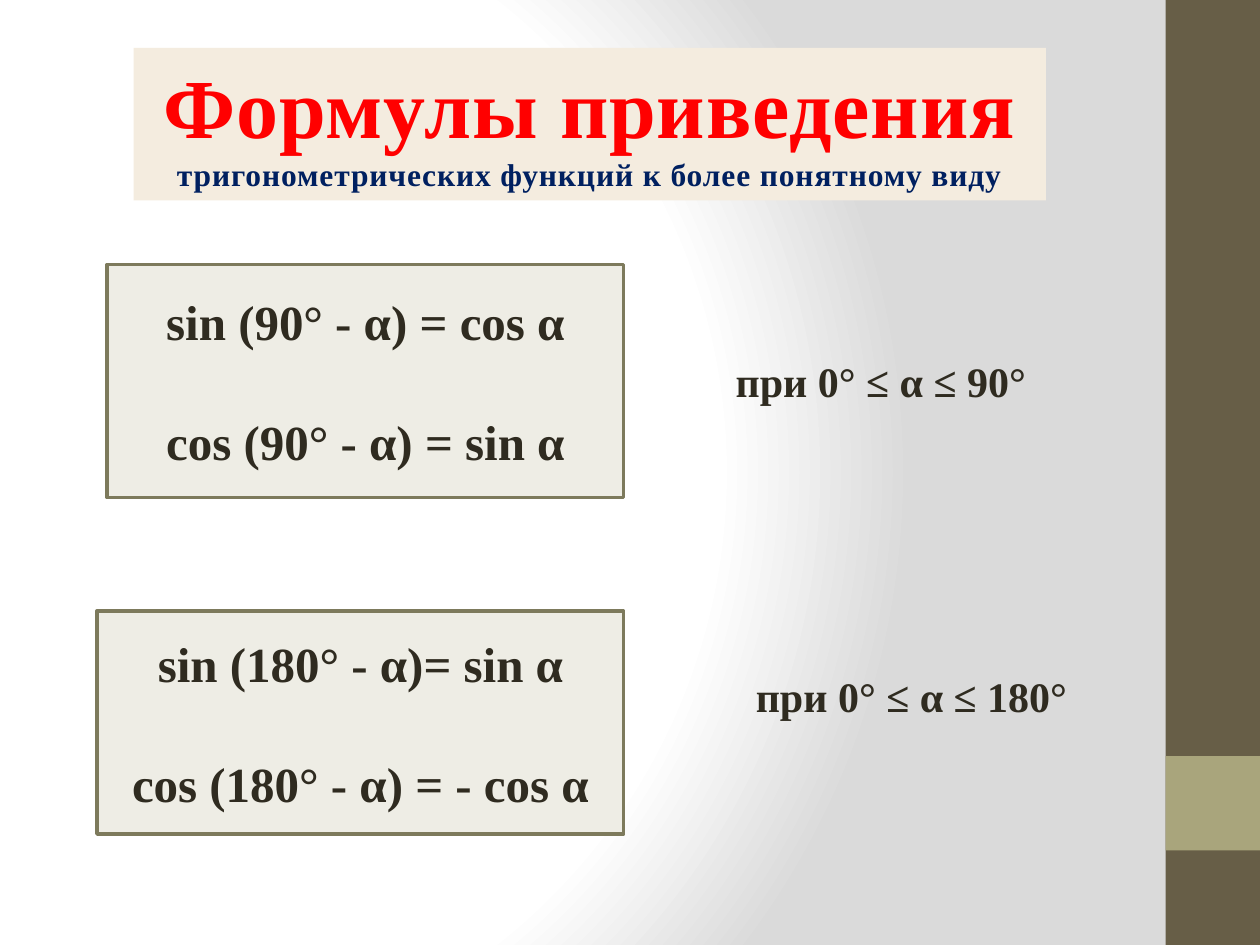
from lxml import etree
from pptx import Presentation
from pptx.dml.color import RGBColor
from pptx.enum.shapes import MSO_SHAPE
from pptx.enum.text import MSO_ANCHOR, MSO_AUTO_SIZE, PP_ALIGN
from pptx.oxml import parse_xml
from pptx.util import Inches, Pt

RECTANGLE = MSO_SHAPE.RECTANGLE
CENTER, LEFT = PP_ALIGN.CENTER, PP_ALIGN.LEFT
TOP, MIDDLE = MSO_ANCHOR.TOP, MSO_ANCHOR.MIDDLE
FONT, INK = "Times New Roman", "2F2B20"
DRAWING = "http://schemas.openxmlformats.org/drawingml/2006/main"

presentation = Presentation()
presentation.slide_width, presentation.slide_height = Inches(10), Inches(7.5)
slide = presentation.slides.add_slide(presentation.slide_layouts[5])
UNIT = presentation.slide_width / 100  # grid of 100 columns by 75 rows


def place(*cells):
    return [round(cell * UNIT) for cell in cells]


def paint(target, color):
    """Give a fill, line fill or font a solid hex colour."""
    if hasattr(target, "solid"):
        target.solid()
        target = target.fore_color
    else:
        target = target.color
    target.rgb = RGBColor.from_string(color)


# Background: radial gradient
slide.background.fill.gradient()
gradient = slide.element.xpath(".//p:bg//a:gradFill")[0]
stops = "".join(
    f'<a:gs pos="{share * 1000}"><a:srgbClr val="{color}"/></a:gs>'
    for share, color in [(0, "FFFFFF"), (75, "FFFFFF"), (100, "DADADA")]
)
gradient.getparent().replace(gradient, parse_xml(
    f'<a:gradFill xmlns:a="{DRAWING}" rotWithShape="1"><a:gsLst>{stops}</a:gsLst>'
    '<a:path path="circle"><a:fillToRect l="20000" t="50000" r="100000" b="50000"/>'
    "</a:path></a:gradFill>"
))

# Side band with its accent square
for top, height, color in [(0, 75, "675E47"), (60, 7.5, "A9A57C")]:
    band = slide.shapes.add_shape(RECTANGLE, *place(92.5, top, 7.5, height))
    band.shadow.inherit = False
    paint(band.fill, color)
    band.line.fill.background()

# Formula boxes and the range in which each pair holds
groups = [
    ((8.5, 21, 41, 18.5), ["sin (90° - α) = cos α", "cos (90° - α) = sin α"],
     (57.4, 27.7, 27.6, 5), "при 0° ≤ α ≤ 90°"),
    ((7.7, 48.5, 41.8, 17.7), ["sin (180° - α)= sin α", "cos (180° - α) = - cos α"],
     (59, 52.7, 27.2, 5), "при 0° ≤ α ≤ 180°"),
]
for box_cells, formulas, range_cells, condition in groups:
    box = slide.shapes.add_shape(RECTANGLE, *place(*box_cells))
    box.shadow.inherit = False
    paint(box.fill, "EEEDE5")
    paint(box.line.fill, "7D7A5C")
    box.line.width = Pt(2)
    box.text_frame.vertical_anchor = MIDDLE
    box.text_frame.text = "\n".join(formulas)
    box.text_frame.paragraphs[1].space_before = Pt(35)

    label = slide.shapes.add_textbox(*place(*range_cells))
    label.text_frame.word_wrap = False
    label.text_frame.text = condition

    for shape, size, alignment in [(box, 28, CENTER), (label, 24, LEFT)]:
        for paragraph in shape.text_frame.paragraphs:
            paragraph.alignment = alignment
            paragraph.font.name, paragraph.font.size = FONT, Pt(size)
            paragraph.font.bold = True
            paint(paragraph.font, INK)

# Title with its second line
title = slide.shapes.title
title.left, title.top, title.width, title.height = place(10.6, 3.8, 72.4, 12.1)
paint(title.fill, "F4ECDF")
frame = title.text_frame
frame.text = "Формулы приведения\nтригонометрических функций к более понятному виду"
frame.word_wrap = True
frame.auto_size = MSO_AUTO_SIZE.SHAPE_TO_FIT_TEXT
frame.vertical_anchor = TOP
for paragraph, size, color in zip(frame.paragraphs, (48, 18), ("FF0000", "002060")):
    paragraph.alignment = CENTER
    paragraph.font.name, paragraph.font.size = FONT, Pt(size)
    paragraph.font.bold = True
    paint(paragraph.font, color)
    properties = paragraph.runs[0].font
    properties.bold = True
    run_properties = paragraph.runs[0]._r.find(etree.QName(DRAWING, "rPr"))
    run_properties.set("spc", "50")  # letter spacing of half a point

# Bring the title in front of the boxes
slide.shapes._spTree.append(title._element)

presentation.save("out.pptx")
